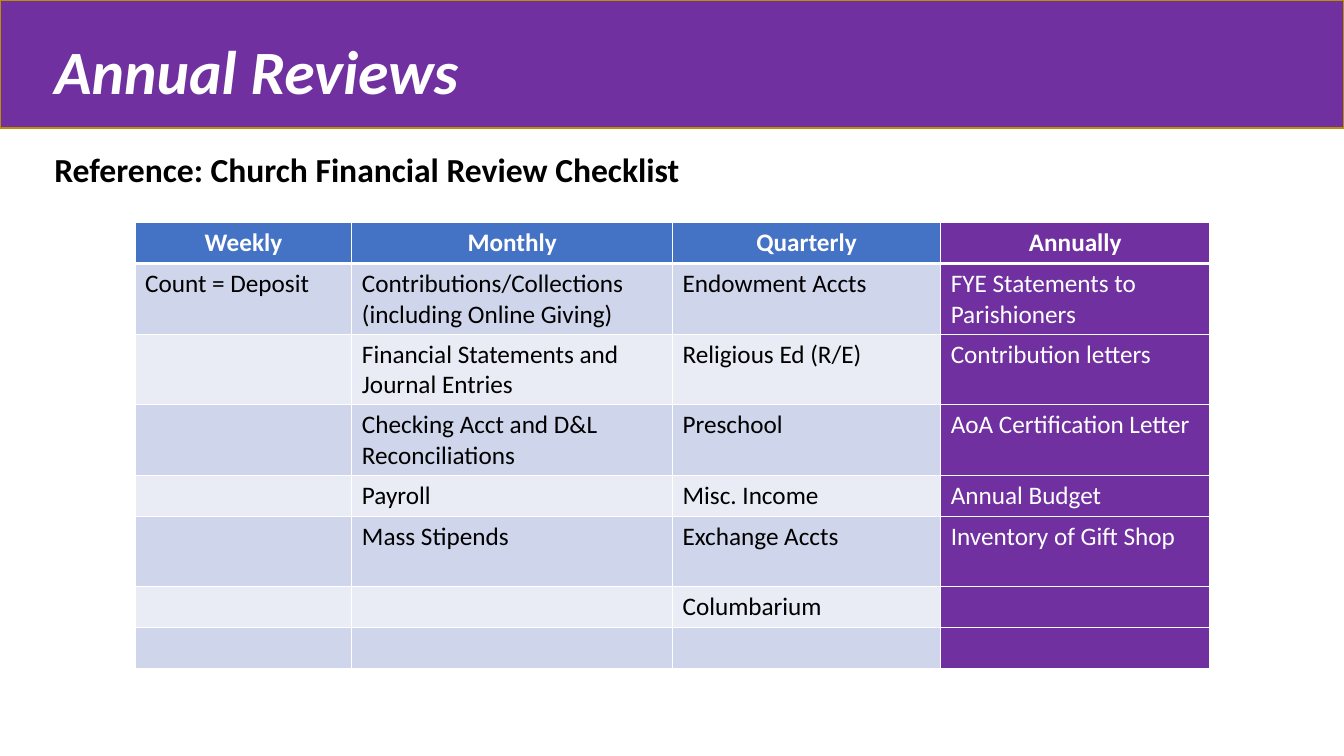
from dataclasses import dataclass

from lxml.etree import SubElement
from pptx import Presentation
from pptx.dml.color import RGBColor as Color
from pptx.enum.shapes import MSO_SHAPE as Shape
from pptx.enum.text import MSO_ANCHOR as Anchor, PP_ALIGN as Align
from pptx.oxml.ns import qn
from pptx.util import Inches, Pt


@dataclass(frozen=True)
class Theme:
    font: str = "Calibri"
    purple: str = "7030A0"
    gold: str = "BD8E00"
    blue: str = "4472C4"
    dark_band: str = "CFD5EA"
    light_band: str = "E9EBF5"
    white: str = "FFFFFF"
    black: str = "000000"
    title_size: int = 44
    subtitle_size: int = 24
    table_size: int = 18


THEME = Theme()


def style_paragraph(paragraph, size, color, bold=False, italic=False):
    font = paragraph.font
    font.name = THEME.font
    font.size = Pt(size)
    font.bold = bold
    font.italic = italic
    font.color.rgb = Color.from_string(color)


def add_border(cell, side, width):
    properties = cell._tc.get_or_add_tcPr()
    line = SubElement(properties, qn(f"a:ln{side}"), w=str(Pt(width)))
    fill = SubElement(line, qn("a:solidFill"))
    SubElement(fill, qn("a:srgbClr"), val=THEME.white)


presentation = Presentation()
presentation.slide_width = Inches(13.33)
presentation.slide_height = Inches(7.5)
slide = presentation.slides.add_slide(presentation.slide_layouts[5])

banner = slide.shapes.add_shape(Shape.RECTANGLE, 0, 0, Inches(13.33), Inches(1.27))
banner.shadow.inherit = False
banner.fill.solid()
banner.fill.fore_color.rgb = Color.from_string(THEME.purple)
banner.line.color.rgb = Color.from_string(THEME.gold)
banner.line.width = Pt(1)

title = slide.shapes.title
banner.element.addnext(title.element)
title.left, title.top = Inches(0.44), Inches(0.28)
title.width, title.height = Inches(12.44), Inches(0.85)
title.text_frame.text = "Annual Reviews"
title.text_frame.vertical_anchor = Anchor.TOP
heading = title.text_frame.paragraphs[0]
heading.alignment = Align.LEFT
heading.line_spacing = 1.0
style_paragraph(heading, THEME.title_size, THEME.white, bold=True, italic=True)

reference = slide.shapes.add_textbox(Inches(0.44), Inches(1.43), Inches(12.44), Inches(0.5))
reference.text_frame.word_wrap = True
reference.text_frame.text = "Reference: Church Financial Review Checklist"
style_paragraph(reference.text_frame.paragraphs[0], THEME.subtitle_size, THEME.black, bold=True)

reviews = [
    ("Weekly", "Monthly", "Quarterly", "Annually"),
    ("Count = Deposit", "Contributions/Collections (including Online Giving)",
     "Endowment Accts", "FYE Statements to Parishioners"),
    ("", "Financial Statements and Journal Entries", "Religious Ed (R/E)", "Contribution letters"),
    ("", "Checking Acct and D&L Reconciliations", "Preschool", "AoA Certification Letter"),
    ("", "Payroll", "Misc. Income", "Annual Budget"),
    ("", "Mass Stipends", "Exchange Accts", "Inventory of Gift Shop"),
    ("", "", "Columbarium", ""),
    ("", "", "", ""),
]
column_widths = [2.15, 3.18, 2.66, 2.67]
single, double = 0.405, 0.7
row_heights = [single, double, double, double, single, double, single, single]

table = slide.shapes.add_table(
    len(reviews), len(column_widths), Inches(1.34), Inches(2.21),
    Inches(sum(column_widths)), Inches(sum(row_heights))).table
for column, width in zip(table.columns, column_widths):
    column.width = Inches(width)
for row, height in zip(table.rows, row_heights):
    row.height = Inches(height)

for row_index, review_row in enumerate(reviews):
    is_header = row_index == 0
    band = THEME.dark_band if row_index % 2 else THEME.light_band
    for column_index, text in enumerate(review_row):
        is_annual = column_index == len(review_row) - 1
        cell = table.cell(row_index, column_index)
        cell.text = text
        for side in "LRTB":
            under_header = (row_index, side) in [(0, "B"), (1, "T")]
            add_border(cell, side, 3 if under_header else 1)
        cell.fill.solid()
        cell.fill.fore_color.rgb = Color.from_string(
            THEME.purple if is_annual else THEME.blue if is_header else band)
        paragraph = cell.text_frame.paragraphs[0]
        paragraph.alignment = Align.CENTER if is_header else Align.LEFT
        style_paragraph(paragraph, THEME.table_size,
                        THEME.white if is_header or is_annual else THEME.black, bold=is_header)

presentation.save("out.pptx")
